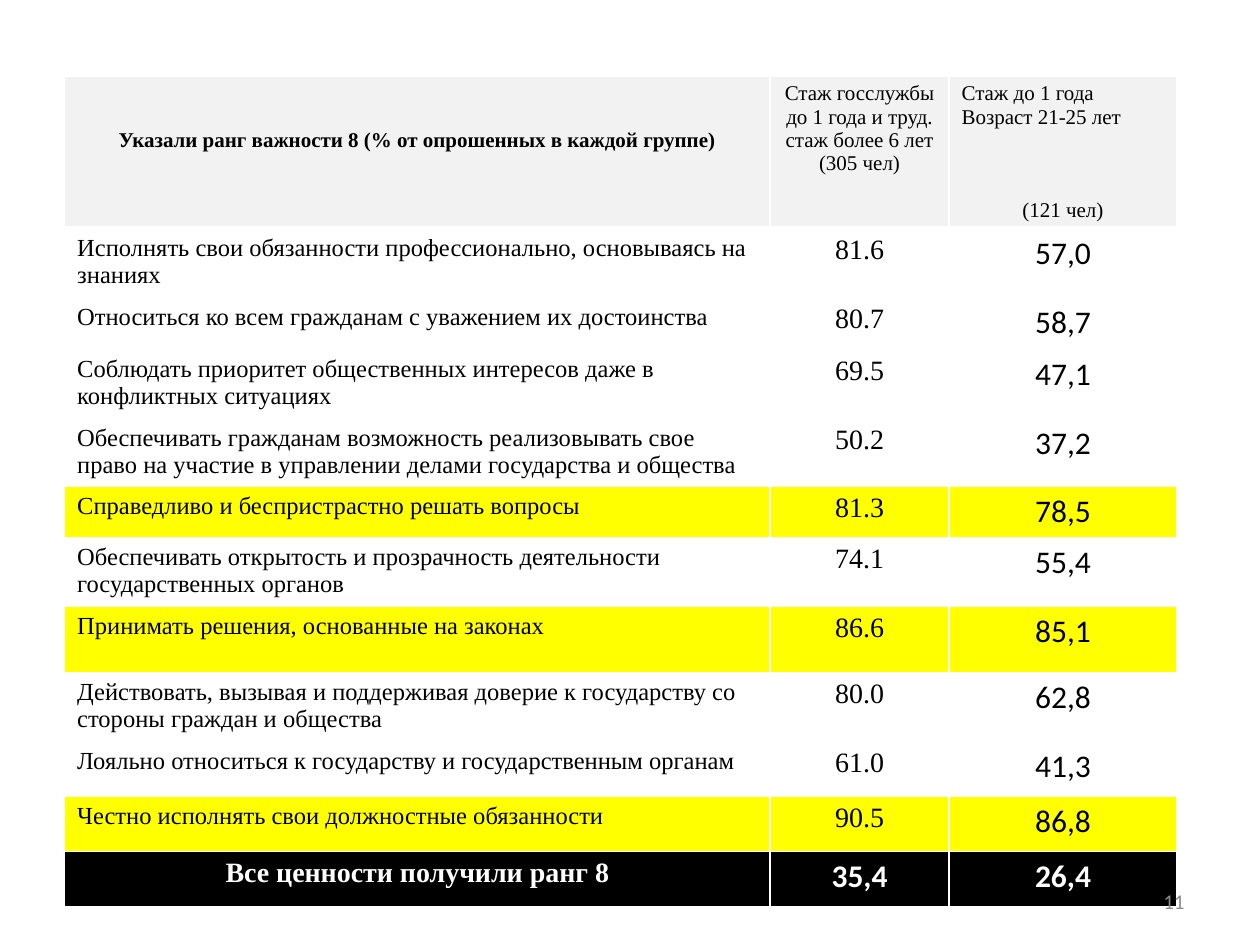
from lxml.etree import SubElement
from pptx import Presentation
from pptx.dml.color import RGBColor
from pptx.enum.text import MSO_ANCHOR as Anchor, PP_ALIGN as Align
from pptx.oxml.ns import qn
from pptx.util import Pt

COLORS = {
    "header": "F2F2F2",
    "highlight": "FFFF00",
    "total": "000000",
    "ink": "000000",
    "white": "FFFFFF",
    "number": "8C8C8C",
}
SERIF, SANS = "Times New Roman", "Calibri"
COLUMN_WIDTHS = [403.2, 102.2, 130.3]
HEADER_HEIGHT, TOTAL_HEIGHT = 86.4, 31.5

HEADERS = [
    "Указали ранг важности 8 (% от опрошенных в каждой группе)",
    "Стаж госслужбы до 1 года и труд. стаж более 6 лет\n(305 чел)",
    "Стаж до 1 года\nВозраст 21-25 лет\n(121 чел)",
]
VALUES = [
    ("Исполнять свои обязанности профессионально, основываясь на знаниях", "81.6", "57,0", 39.2, False),
    ("Относиться ко всем гражданам с уважением их достоинства", "80.7", "58,7", 30, False),
    ("Соблюдать приоритет общественных интересов даже в конфликтных ситуациях", "69.5", "47,1", 39.2, False),
    ("Обеспечивать гражданам возможность реализовывать свое право на участие в управлении "
     "делами государства и общества", "50.2", "37,2", 39.2, False),
    ("Справедливо и беспристрастно решать вопросы", "81.3", "78,5", 29.2, True),
    ("Обеспечивать открытость и прозрачность деятельности государственных органов", "74.1", "55,4", 39.2, False),
    ("Принимать решения, основанные на законах", "86.6", "85,1", 38, True),
    ("Действовать, вызывая и поддерживая доверие к государству со стороны граждан и общества",
     "80.0", "62,8", 39.2, False),
    ("Лояльно относиться к государству и государственным органам", "61.0", "41,3", 31.5, False),
    ("Честно исполнять свои должностные обязанности", "90.5", "86,8", 31.5, True),
]
TOTALS = ["Все ценности получили ранг 8", "35,4", "26,4"]


def write(frame, text, size, font, color="ink", bold=False, align=Align.CENTER):
    frame.text = text
    for paragraph in frame.paragraphs:
        paragraph.alignment = align
        for run in paragraph.runs:
            run.font.size = Pt(size)
            run.font.name = font
            run.font.bold = bold
            run.font.color.rgb = RGBColor.from_string(COLORS[color])


def paint(cell, fill=None, bottom=1):
    properties = cell._tc.get_or_add_tcPr()
    for side in ("L", "R", "T", "B"):
        width = Pt(bottom if side == "B" else 1)
        border = SubElement(properties, qn(f"a:ln{side}"), w=str(width))
        solid = SubElement(border, qn("a:solidFill"))
        SubElement(solid, qn("a:srgbClr"), val=COLORS["white"])
    if fill:
        cell.fill.solid()
        cell.fill.fore_color.rgb = RGBColor.from_string(COLORS[fill])
    else:
        cell.fill.background()


def fill_header(cells):
    for index, (cell, text) in enumerate(zip(cells, HEADERS)):
        write(cell.text_frame, text, 12, SERIF, bold=index == 0)
        paint(cell, "header", bottom=3)
    cells[0].margin_top = Pt(30.4)
    first, second, count = cells[2].text_frame.paragraphs
    first.alignment = second.alignment = Align.LEFT
    count.space_before = Pt(40)


def fill_value(cells, value, experienced, young, highlighted):
    write(cells[0].text_frame, value, 14, SERIF, align=Align.LEFT)
    write(cells[1].text_frame, experienced, 16, SERIF)
    write(cells[2].text_frame, young, 18, SANS)
    for cell in cells:
        paint(cell, "highlight" if highlighted else None)


def fill_total(cells):
    for cell, text, size, font in zip(cells, TOTALS, (16, 18, 18), (SERIF, SANS, SANS)):
        write(cell.text_frame, text, size, font, "white", bold=True)
        paint(cell, "total")


def add_ranking(slide, left, top):
    heights = [HEADER_HEIGHT, *(value[3] for value in VALUES), TOTAL_HEIGHT]
    ranking = slide.shapes.add_table(
        len(heights), len(COLUMN_WIDTHS), Pt(left), Pt(top), Pt(sum(COLUMN_WIDTHS)), Pt(sum(heights))
    ).table
    ranking.first_row = ranking.horz_banding = False
    for column, width in zip(ranking.columns, COLUMN_WIDTHS):
        column.width = Pt(width)
    for row, height in zip(ranking.rows, heights):
        row.height = Pt(height)
    header, *body, total = [list(row.cells) for row in ranking.rows]
    fill_header(header)
    for cells, (value, experienced, young, _, highlighted) in zip(body, VALUES):
        fill_value(cells, value, experienced, young, highlighted)
    fill_total(total)


def add_page_number(slide, left, top, width, height):
    frame = slide.shapes.add_textbox(Pt(left), Pt(top), Pt(width), Pt(height)).text_frame
    frame.word_wrap = True
    frame.vertical_anchor = Anchor.MIDDLE
    write(frame, "11", 12, SANS, "number", align=Align.RIGHT)


def main():
    deck = Presentation()
    deck.slide_width, deck.slide_height = Pt(720), Pt(540)
    slide = deck.slides.add_slide(deck.slide_layouts[6])
    add_ranking(slide, 36.9, 43.3)
    add_page_number(slide, 516, 500.5, 168, 28.75)
    deck.save("out.pptx")


if __name__ == "__main__":
    main()
